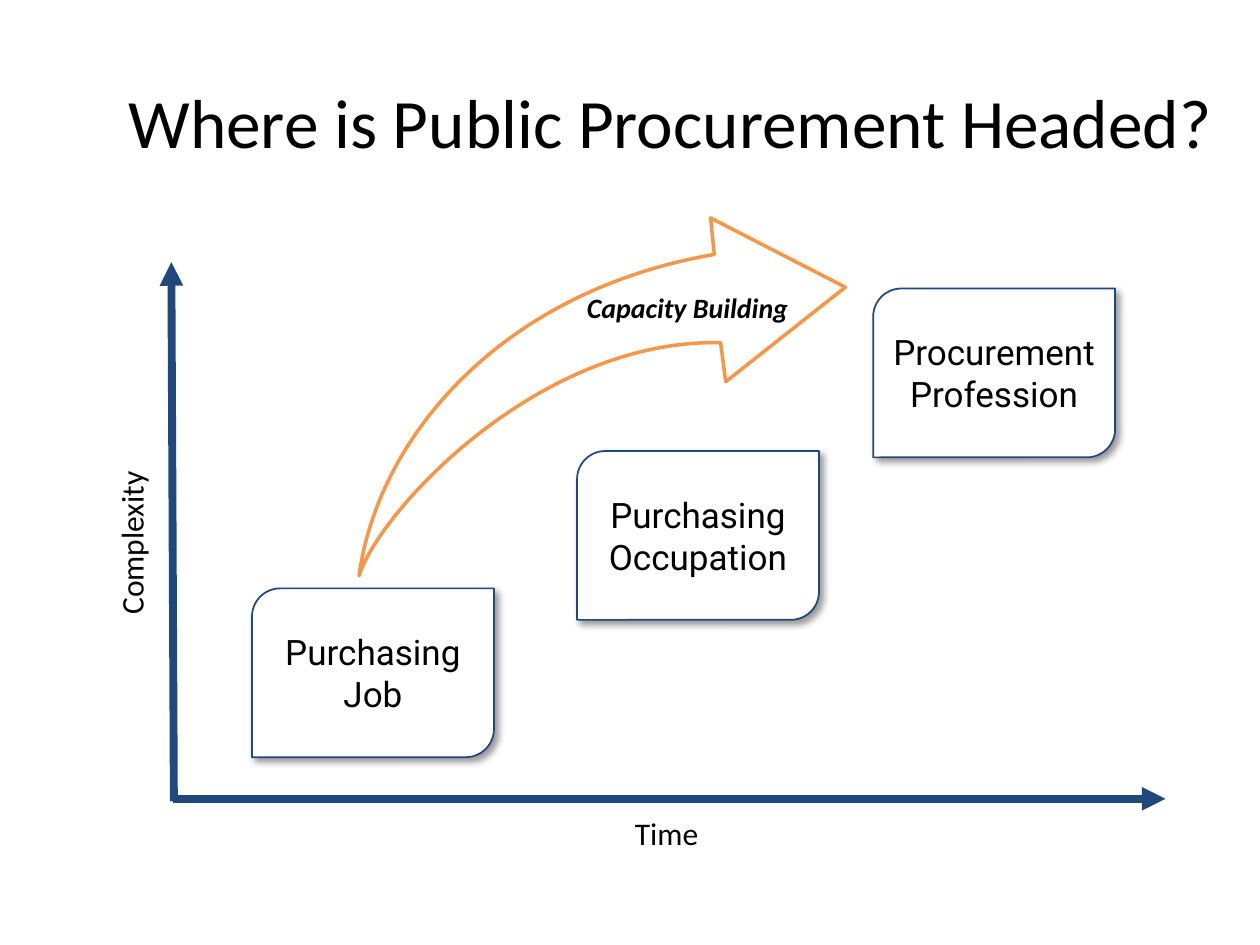
from lxml import etree
from pptx import Presentation
from pptx.dml.color import RGBColor
from pptx.enum.shapes import MSO_CONNECTOR, MSO_SHAPE
from pptx.enum.text import MSO_ANCHOR, MSO_AUTO_SIZE, PP_ALIGN
from pptx.oxml import parse_xml
from pptx.oxml.ns import nsdecls, qn
from pptx.util import Pt

PX = 9144
NAVY = RGBColor(0x1F, 0x49, 0x7D)
ORANGE = RGBColor(0xF7, 0x96, 0x46)
BLACK = RGBColor(0, 0, 0)
WHITE = RGBColor(255, 255, 255)
LEFT, CENTER = PP_ALIGN.LEFT, PP_ALIGN.CENTER
MIDDLE = MSO_ANCHOR.MIDDLE
STRAIGHT = MSO_CONNECTOR.STRAIGHT
ROUND_DIAG = MSO_SHAPE.ROUND_2_DIAG_RECTANGLE
NO_FIT = MSO_AUTO_SIZE.NONE

SHADOW = (
    f'<a:effectLst {nsdecls("a")}><a:outerShdw blurRad="50800" dist="38100" '
    'dir="2700000" algn="tl" rotWithShape="0"><a:srgbClr val="000000">'
    '<a:alpha val="40000"/></a:srgbClr></a:outerShdw></a:effectLst>'
)


def px(*values):
    return [v * PX for v in values]


def set_text(sp, text, size, font, align, bold=False, italic=False):
    tf = sp.text_frame
    tf.text = text
    for p in tf.paragraphs:
        p.alignment = align
        for r in p.runs:
            r.font.size = Pt(size)
            r.font.name = font
            r.font.bold = bold
            r.font.italic = italic
            r.font.color.rgb = BLACK


prs = Presentation()
prs.slide_width, prs.slide_height = px(1000, 750)
s = prs.slides.add_slide(prs.slide_layouts[5])

title = s.shapes.title
title.left, title.top, title.width, title.height = px(92, 33, 883, 125)
set_text(title, "Where is Public Procurement Headed?", 39.6, "Calibri", LEFT)
title.text_frame.vertical_anchor = MIDDLE
title.text_frame.auto_size = NO_FIT

for ends in [(137, 634, 925, 634), (138, 636, 136, 208)]:
    axis = s.shapes.add_connector(STRAIGHT, *px(*ends))
    axis.line.color.rgb = NAVY
    axis.line.width = Pt(4.5)
    etree.SubElement(axis.line._get_or_add_ln(), qn("a:tailEnd"), type="triangle")
    etree.SubElement(axis._element.spPr, qn("a:effectLst"))

for text, box, angle in [
    ("Time", (158, 641, 742, 40), 0),
    ("Complexity", (-99, 411, 406, 40), 270),
]:
    label = s.shapes.add_textbox(*px(*box))
    label.rotation = angle
    label.text_frame.word_wrap = True
    set_text(label, text, 18, "Calibri", CENTER)

for text, x, y in [
    ("Purchasing\nJob", 200, 467),
    ("Purchasing\nOccupation", 458, 358),
    ("Procurement\vProfession", 693, 229),
]:
    stage = s.shapes.add_shape(ROUND_DIAG, *px(x, y, 192, 134))
    stage.fill.solid()
    stage.fill.fore_color.rgb = WHITE
    stage.line.color.rgb = NAVY
    stage.line.width = Pt(1)
    stage._element.spPr.append(parse_xml(SHADOW))
    tf = stage.text_frame
    tf.vertical_anchor = MIDDLE
    tf.margin_left = tf.margin_right = tf.margin_top = tf.margin_bottom = 5 * PX
    set_text(stage, text, 20, "Roboto", CENTER)

outer_curve = [(300, 347), (398, 231), (567, 202)]
head = [(564, 173), (671, 228), (576, 303), (572, 272)]
inner_curve = [(427, 269), (301, 406), (285, 457)]
builder = s.shapes.build_freeform(285, 457, scale=PX)
builder.add_line_segments(outer_curve + head + inner_curve, close=True)
arrow = builder.convert_to_shape()
lines = list(arrow._element.iter(qn("a:lnTo")))
for group in (lines[:3], lines[7:10]):
    curve = etree.Element(qn("a:cubicBezTo"))
    group[0].addprevious(curve)
    for line in group:
        curve.append(line[0])
        line.getparent().remove(line)
arrow.shadow.inherit = False
arrow.fill.solid()
arrow.fill.fore_color.rgb = WHITE
arrow.line.color.rgb = ORANGE
arrow.line.width = Pt(2)

caption = s.shapes.add_textbox(*px(456, 226, 186, 37))
caption.text_frame.word_wrap = False
set_text(caption, "Capacity Building", 16, "Calibri", LEFT, bold=True, italic=True)

prs.save("out.pptx")
